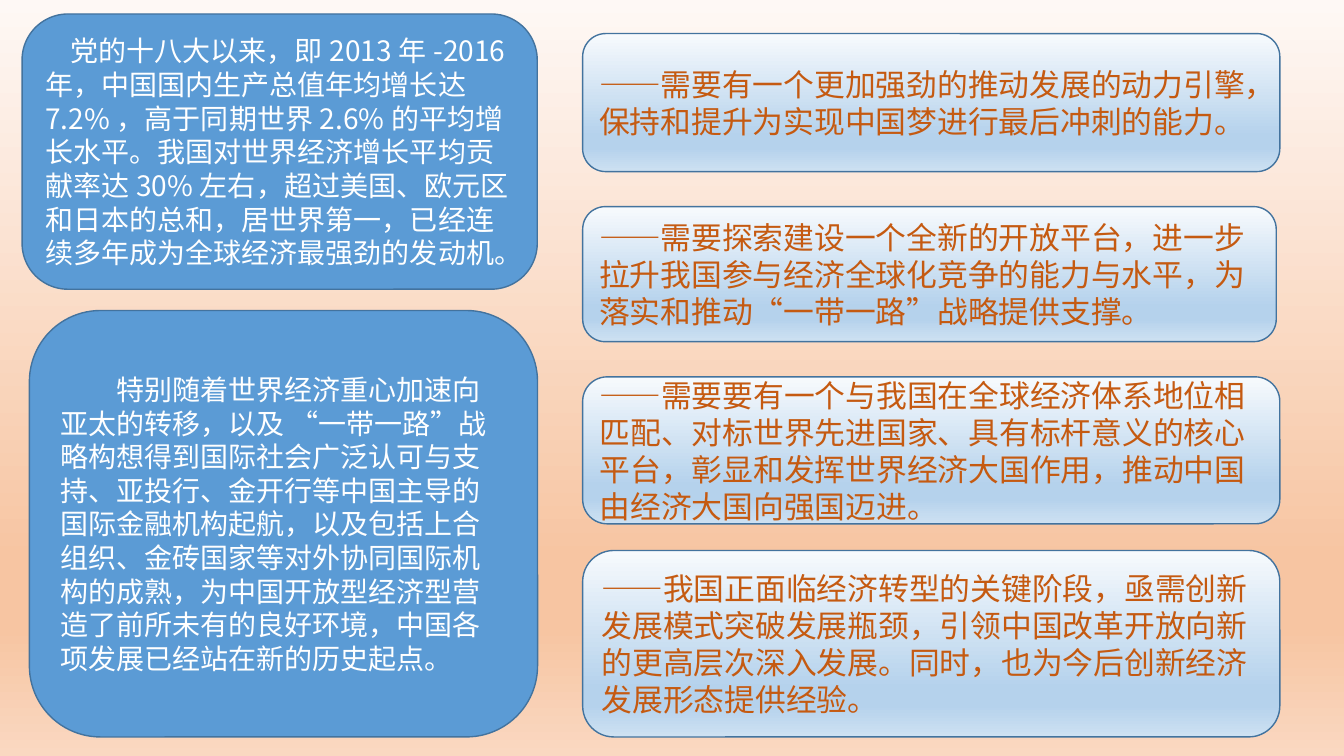
from lxml.etree import SubElement as Sub
from pptx import Presentation
from pptx.dml.color import RGBColor
from pptx.enum.lang import MSO_LANGUAGE_ID as Lang
from pptx.enum.shapes import MSO_SHAPE as Kind
from pptx.enum.text import MSO_ANCHOR as Anchor, PP_ALIGN as Align
from pptx.oxml.ns import qn
from pptx.util import Pt

NOTO = "Noto Sans CJK SC"
LATIN = "Calibri"
PEACH = ["FEF8F5", "F7C5A2", "F7C5A2", "FAD8C1"]
SKY = ["F7FAFD", "B5D2EC", "B5D2EC", "CEE1F2"]

FACTS = [
    (15.8, 10, 368, 196.6, NOTO, 18,
     "党的十八大以来，即2013年-2016年，中国国内生产总值年均增长达7.2%，高于同期世界2.6%的平均增长水平。"
     "我国对世界经济增长平均贡献率达30%左右，超过美国、欧元区和日本的总和，居世界第一，"
     "已经连续多年成为全球经济最强劲的发动机。"),
    (21, 221.8, 363, 304.6, LATIN, 40,
     "特别随着世界经济重心加速向亚太的转移，以及 “一带一路”战略构想得到国际社会广泛认可与支持、"
     "亚投行、金开行等中国主导的国际金融机构起航，以及包括上合组织、金砖国家等对外协同国际机构的成熟，"
     "为中国开放型经济型营造了前所未有的良好环境，中国各项发展已经站在新的历史起点。"),
]
NEEDS = [
    (24, 498, 98.6,
     "——需要有一个更加强劲的推动发展的动力引擎，保持和提升为实现中国梦进行最后冲刺的能力。"),
    (147.6, 495.4, 96.5,
     "——需要探索建设一个全新的开放平台，进一步拉升我国参与经济全球化竞争的能力与水平，"
     "为落实和推动“一带一路”战略提供支撑。"),
    (269.2, 498, 105,
     "——需要要有一个与我国在全球经济体系地位相匹配、对标世界先进国家、具有标杆意义的核心平台，"
     "彰显和发挥世界经济大国作用，推动中国由经济大国向强国迈进。"),
    (393.2, 498, 133.2,
     "——我国正面临经济转型的关键阶段，亟需创新发展模式突破发展瓶颈，"
     "引领中国改革开放向新的更高层次深入发展。同时，也为今后创新经济发展形态提供经验。"),
]


def tint(code):
    """Turn a hex string into a colour."""
    return RGBColor.from_string(code)


class Deck:
    """Hold the style and the current slide."""

    edge = "43739E"
    stops = [0, 74, 83, 100]

    def __init__(self):
        """Open a deck with one blank slide."""
        self.deck = Presentation()
        self.deck.slide_width, self.deck.slide_height = Pt(960), Pt(540)
        self.slide = self.deck.slides.add_slide(self.deck.slide_layouts[6])

    def fade(self, fill, host, tints):
        """Fill from top to bottom through the given colours."""
        fill.gradient()
        fill.gradient_angle = 270
        band = host.find(".//" + qn("a:gsLst"))
        for old in list(band):
            band.remove(old)
        for stop, code in zip(self.stops, tints):
            mark = Sub(band, qn("a:gs"), pos=str(stop * 1000))
            Sub(mark, qn("a:srgbClr"), val=code)

    def ground(self, tints):
        """Paint the slide background."""
        self.fade(self.slide.background.fill, self.slide.element, tints)

    def card(self, left, top, wide, high):
        """Draw an outlined round box."""
        box = self.slide.shapes.add_shape(
            Kind.ROUNDED_RECTANGLE, Pt(left), Pt(top), Pt(wide), Pt(high))
        box.shadow.inherit = False
        box.line.color.rgb = tint(self.edge)
        box.line.width = Pt(1)
        return box

    def label(self, box, text, size, face, code, dent=0):
        """Set the paragraph of a box."""
        frame = box.text_frame
        frame.word_wrap = True
        frame.vertical_anchor = Anchor.MIDDLE
        para = frame.paragraphs[0]
        para.text = text
        para.alignment = Align.LEFT
        if dent:
            para._p.get_or_add_pPr().set("indent", str(Pt(dent)))
        run = para.runs[0]
        font = run.font
        font.size, font.name = Pt(size), face
        font.color.rgb = tint(code)
        font.language_id = Lang.SIMPLIFIED_CHINESE
        Sub(run._r.get_or_add_rPr(), qn("a:ea"), typeface=NOTO)

    def fact(self, left, top, wide, high, face, dent, text):
        """Add a solid blue box with white text."""
        box = self.card(left, top, wide, high)
        box.fill.solid()
        box.fill.fore_color.rgb = tint("5B9BD5")
        self.label(box, text, 20, face, "FFFFFF", dent)

    def need(self, top, wide, high, text):
        """Add a pale box with orange text."""
        box = self.card(416.2, top, wide, high)
        self.fade(box.fill, box.element, SKY)
        self.label(box, text, 22, LATIN, "C55A11")


def main():
    """Build and save the slide."""
    show = Deck()
    show.ground(PEACH)
    for fact in FACTS:
        show.fact(*fact)
    for need in NEEDS:
        show.need(*need)
    show.deck.save("out.pptx")


if __name__ == "__main__":
    main()
